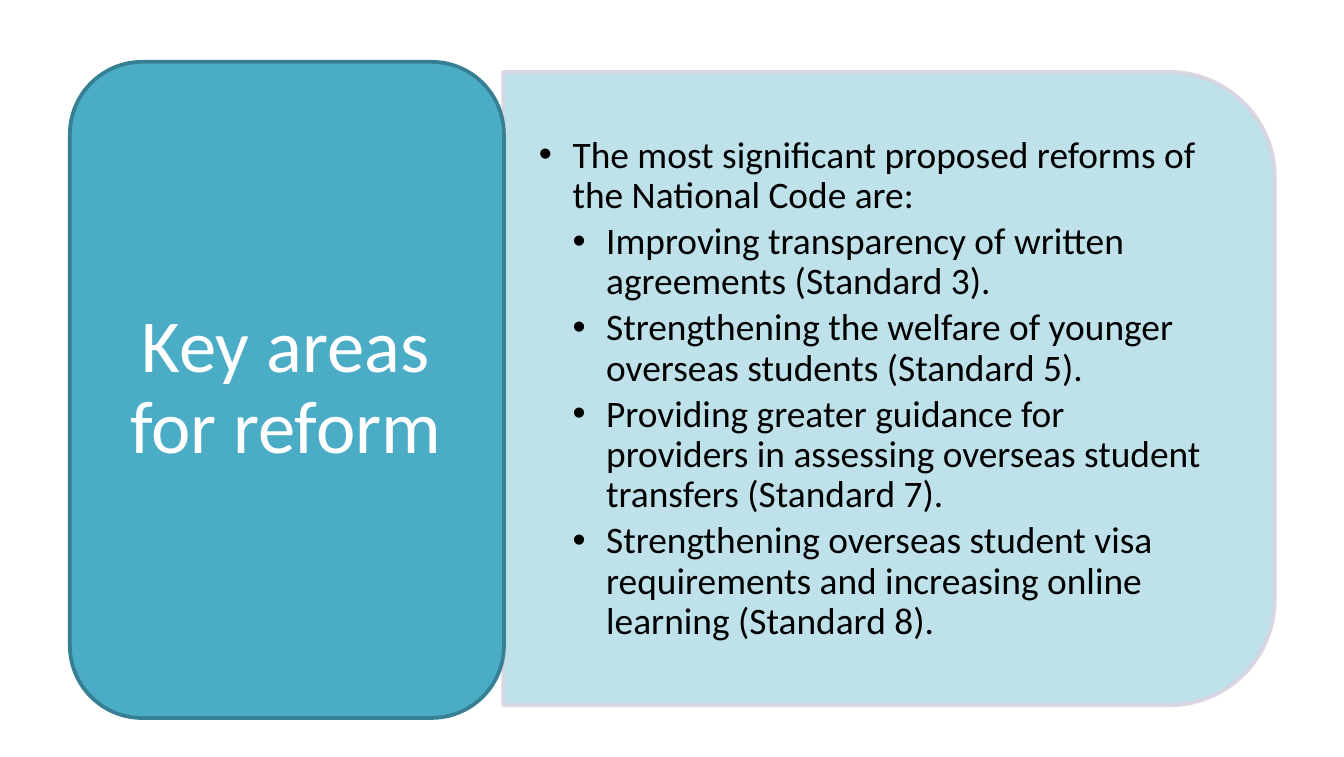
from lxml import etree
from pptx import Presentation
from pptx.dml.color import RGBColor
from pptx.enum.shapes import MSO_SHAPE as Preset
from pptx.enum.text import MSO_ANCHOR as Anchor, PP_ALIGN as Align
from pptx.oxml.ns import qn
from pptx.util import Inches, Pt

COLORS = {
    "card": "4BACC6",
    "card_edge": "377F92",
    "panel": "B7DEE8",
    "panel_edge": "D8D3E0",
    "title": "FFFFFF",
    "body": "000000",
}
FONT = "Calibri"
INDENT = 0.25
INTRO = "The most significant proposed reforms of the National Code are:"
REFORMS = [
    "Improving transparency of written agreements (Standard 3).",
    "Strengthening the welfare of younger overseas students (Standard 5).",
    "Providing greater guidance for providers in assessing overseas student transfers (Standard 7).",
    "Strengthening overseas student visa requirements and increasing online learning (Standard 8).",
]


def rgb(name):
    return RGBColor.from_string(COLORS[name])


def set_opacity(fill_parent, percent):
    color = fill_parent.find(qn("a:solidFill")).find(qn("a:srgbClr"))
    etree.SubElement(color, qn("a:alpha"), val=str(percent * 1000))


def add_block(slide, preset, box, fill, edge, rotation=0, opacity=100):
    block = slide.shapes.add_shape(preset, *map(Inches, box))
    block.rotation = rotation
    block.shadow.inherit = False
    block.fill.solid()
    block.fill.fore_color.rgb = rgb(fill)
    block.line.color.rgb = rgb(edge)
    block.line.width = Pt(2)
    if opacity < 100:
        properties = block.fill._xPr
        set_opacity(properties, opacity)
        set_opacity(properties.find(qn("a:ln")), opacity)


def add_text_area(slide, box, side_inset, end_inset):
    frame = slide.shapes.add_textbox(*map(Inches, box)).text_frame
    frame.word_wrap = True
    frame.vertical_anchor = Anchor.MIDDLE
    frame.margin_left = frame.margin_right = Inches(side_inset)
    frame.margin_top = frame.margin_bottom = Inches(end_inset)
    return frame


def write(paragraph, words, size, color):
    paragraph.line_spacing = 0.9
    run = paragraph.add_run()
    run.text = words
    run.font.name = FONT
    run.font.size = Pt(size)
    run.font.color.rgb = rgb(color)


def add_bullet(paragraph, level):
    paragraph.level = level
    properties = paragraph._p.get_or_add_pPr()
    properties.set("marL", str(Inches(INDENT * level)))
    properties.set("indent", str(Inches(-INDENT)))
    etree.SubElement(properties, qn("a:buFont"), typeface="Arial")
    etree.SubElement(properties, qn("a:buChar"), char="•")
    paragraph.space_after = Pt(3)


def add_reforms(slide):
    add_block(slide, Preset.ROUND_2_SAME_RECTANGLE, (4.26, 0.02, 4.71, 5.74),
              "panel", "panel_edge", rotation=90, opacity=90)
    frame = add_text_area(slide, (3.74, 0.77, 5.51, 4.25), 0.27, 0.14)
    intro = frame.paragraphs[0]
    add_bullet(intro, 1)
    write(intro, INTRO, 20, "body")
    for reform in REFORMS:
        item = frame.add_paragraph()
        add_bullet(item, 2)
        write(item, reform, 20, "body")


def add_title_card(slide):
    add_block(slide, Preset.ROUNDED_RECTANGLE, (0.52, 0.46, 3.23, 4.88), "card", "card_edge")
    title = add_text_area(slide, (0.67, 0.61, 2.91, 4.56), 0.17, 0.08).paragraphs[0]
    title.alignment = Align.CENTER
    write(title, "Key areas for reform", 40, "title")


def main():
    deck = Presentation()
    deck.slide_width = Inches(10)
    deck.slide_height = Inches(5.63)
    slide = deck.slides.add_slide(deck.slide_layouts[6])
    add_reforms(slide)
    add_title_card(slide)
    deck.save("out.pptx")


if __name__ == "__main__":
    main()
